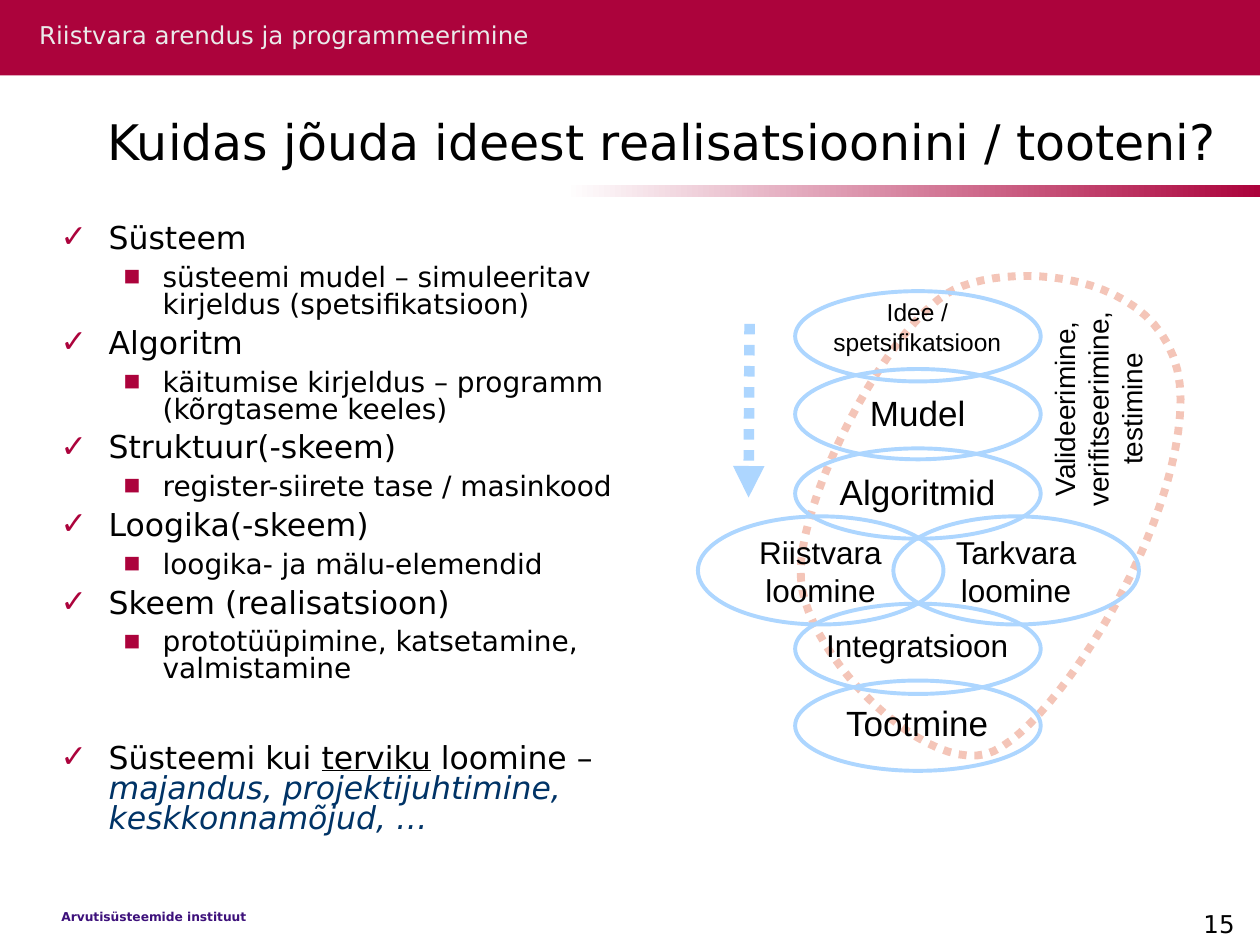
from dataclasses import dataclass

from lxml.etree import SubElement
from pptx import Presentation
from pptx.dml.color import RGBColor
from pptx.enum.dml import MSO_LINE
from pptx.enum.shapes import MSO_CONNECTOR, MSO_SHAPE
from pptx.enum.text import MSO_ANCHOR, MSO_AUTO_SIZE, PP_ALIGN
from pptx.oxml.ns import qn
from pptx.util import Cm, Pt

COLORS = {
    "crimson": "AC033C", "white": "FFFFFF", "pale": "EAEAEA", "violet": "3D117B",
    "black": "000000", "navy": "003366", "sky": "ADD6FF", "salmon": "F4C5B8",
}
SANS, ARIAL = "DejaVu Sans", "Arial"
OVAL_WIDTH, COLUMN_LEFT = 4.95, 16.03


@dataclass(frozen=True)
class Box:
    left: float
    top: float
    width: float
    height: float

    def lengths(self) -> tuple:
        return Cm(self.left), Cm(self.top), Cm(self.width), Cm(self.height)


@dataclass(frozen=True)
class Style:
    size: float
    font: str = SANS
    color: str = "black"
    bold: bool = False
    italic: bool = False
    underline: bool = False


@dataclass(frozen=True)
class Stage:
    lines: tuple
    size: int
    label: Box
    oval: Box


@dataclass(frozen=True)
class Level:
    size: int
    bullet: str
    margin: float
    hanging: float


TOPIC = Level(18, "✓", 0.97, 0.97)
DETAIL = Level(16, "■", 2.06, 0.79)

STAGES = [
    Stage(("Idee /", "spetsifikatsioon"), 14, Box(16.54, 5.87, 3.91, 1.45),
          Box(COLUMN_LEFT, 5.87, OVAL_WIDTH, 1.82)),
    Stage(("Algoritmid",), 20, Box(16.66, 9.37, 3.68, 1.12),
          Box(COLUMN_LEFT, 9.04, OVAL_WIDTH, 1.82)),
    Stage(("Mudel",), 20, Box(17.27, 7.77, 2.46, 1.12),
          Box(COLUMN_LEFT, 7.44, OVAL_WIDTH, 1.82)),
    Stage(("Riistvara", "loomine"), 18, Box(15.04, 10.62, 3, 1.8),
          Box(14.07, 10.41, OVAL_WIDTH, 2.18)),
    Stage(("Tarkvara", "loomine"), 18, Box(19, 10.62, 2.97, 1.8),
          Box(18.01, 10.41, OVAL_WIDTH, 2.18)),
    Stage(("Integratsioon",), 18, Box(16.38, 12.5, 4.22, 1.02),
          Box(COLUMN_LEFT, 12.17, OVAL_WIDTH, 1.82)),
    Stage(("Tootmine",), 20, Box(16.79, 14.02, 3.4, 1.12),
          Box(COLUMN_LEFT, 13.72, OVAL_WIDTH, 1.82)),
]

OUTLINE = [
    ("Süsteem", "süsteemi mudel – simuleeritav kirjeldus (spetsifikatsioon)"),
    ("Algoritm", "käitumise kirjeldus – programm (kõrgtaseme keeles)"),
    ("Struktuur(-skeem)", "register-siirete tase / masinkood"),
    ("Loogika(-skeem)", "loogika- ja mälu-elemendid"),
    ("Skeem (realisatsioon)", "prototüüpimine, katsetamine, valmistamine"),
]
CONCLUSION = [
    ("Süsteemi kui ", Style(18)),
    ("terviku", Style(18, underline=True)),
    (" loomine – ", Style(18)),
    ("majandus, projektijuhtimine, keskkonnamõjud, …", Style(18, color="navy", italic=True)),
]

LOOP_START = (16.15, 11.71)
LOOP_CURVES = [
    ((16, 10.16), (17.96, 6.45), (19.23, 5.84)),
    ((20.5, 5.23), (23.8, 5.49), (23.8, 8.05)),
    ((23.8, 10.62), (21.34, 14.53), (20.04, 15.14)),
    ((18.77, 15.75), (16.28, 13.26), LOOP_START),
]


def rgb(name: str) -> RGBColor:
    return RGBColor.from_string(COLORS[name])


def add_run(paragraph, text: str, style: Style) -> None:
    run = paragraph.add_run()
    run.text = text
    font = run.font
    font.size, font.name = Pt(style.size), style.font
    font.color.rgb = rgb(style.color)
    font.bold, font.italic, font.underline = style.bold, style.italic, style.underline


def place(shape, box: Box) -> None:
    shape.left, shape.top, shape.width, shape.height = box.lengths()


def set_margins(frame, top: float = 0) -> None:
    frame.margin_left = frame.margin_right = frame.margin_bottom = 0
    frame.margin_top = Cm(top)


def add_label(slide, lines: tuple, box: Box, style: Style, align=PP_ALIGN.CENTER):
    label = slide.shapes.add_textbox(*box.lengths())
    label.text_frame.word_wrap = False
    paragraph = label.text_frame.paragraphs[0]
    paragraph.alignment = align
    for index, line in enumerate(lines):
        if index:
            paragraph.add_line_break()
        add_run(paragraph, line, style)
    return label


def add_band(slide, box: Box):
    band = slide.shapes.add_shape(MSO_SHAPE.RECTANGLE, *box.lengths())
    band.shadow.inherit = False
    band.line.fill.background()
    return band


def add_stage(slide, stage: Stage) -> None:
    add_label(slide, stage.lines, stage.label, Style(stage.size, ARIAL))
    oval = slide.shapes.add_shape(MSO_SHAPE.OVAL, *stage.oval.lengths())
    oval.shadow.inherit = False
    oval.fill.background()
    oval.line.color.rgb = rgb("sky")
    oval.line.width = Pt(2.25)


def curve_points(start: tuple, curves: list, steps: int = 24) -> list:
    points = []
    for first, second, end in curves:
        for step in range(1, steps + 1):
            t = step / steps
            u = 1 - t
            points.append(tuple(
                Cm(u**3 * a + 3 * u * u * t * b + 3 * u * t * t * c + t**3 * d)
                for a, b, c, d in zip(start, first, second, end)))
        start = end
    return points


def style_dots(line, color: str, width: float) -> None:
    line.color.rgb = rgb(color)
    line.width = Pt(width)
    line.dash_style = MSO_LINE.ROUND_DOT


def add_loop(slide) -> None:
    builder = slide.shapes.build_freeform(*(Cm(value) for value in LOOP_START))
    builder.add_line_segments(curve_points(LOOP_START, LOOP_CURVES)[:-1], close=True)
    loop = builder.convert_to_shape()
    loop.shadow.inherit = False
    loop.fill.background()
    style_dots(loop.line, "salmon", 4.5)


def add_flow_arrow(slide) -> None:
    arrow = slide.shapes.add_connector(
        MSO_CONNECTOR.STRAIGHT, Cm(15.11), Cm(6.53), Cm(15.09), Cm(10.03))
    style_dots(arrow.line, "sky", 6)
    properties = arrow.element.spPr
    SubElement(properties.find(qn("a:ln")), qn("a:tailEnd"), type="triangle")
    SubElement(properties, qn("a:effectLst"))


def add_item(frame, level: Level, runs: list, before: float) -> None:
    first = not frame.paragraphs[0].runs
    paragraph = frame.paragraphs[0] if first else frame.add_paragraph()
    paragraph.level = int(level is DETAIL)
    properties = paragraph._p.get_or_add_pPr()
    properties.set("marL", str(Cm(level.margin)))
    properties.set("indent", str(-Cm(level.hanging)))
    bullet_color = SubElement(properties, qn("a:buClr"))
    SubElement(bullet_color, qn("a:srgbClr"), val=COLORS["crimson"])
    SubElement(properties, qn("a:buFont"), typeface=ARIAL)
    SubElement(properties, qn("a:buChar"), char=level.bullet)
    paragraph.line_spacing = 0.8
    paragraph.space_before = Pt(0 if first else before)
    paragraph.space_after = Pt(round(level.size * 0.115, 1))
    for text, style in runs:
        add_run(paragraph, text, style)


def fill_outline(body) -> None:
    place(body, Box(1.22, 4.55, 11.68, 12.93))
    frame = body.text_frame
    frame.auto_size, frame.word_wrap = MSO_AUTO_SIZE.NONE, True
    frame.vertical_anchor = MSO_ANCHOR.TOP
    set_margins(frame)
    for pair in OUTLINE:
        for level, text in zip((TOPIC, DETAIL), pair):
            add_item(frame, level, [(text, Style(level.size))], round(level.size * 0.23, 1))
    add_item(frame, TOPIC, CONCLUSION, 33)


def fill_title(title) -> None:
    place(title, Box(0.3, 2.11, 24.46, 1.45))
    frame = title.text_frame
    frame.auto_size, frame.vertical_anchor = MSO_AUTO_SIZE.NONE, MSO_ANCHOR.BOTTOM
    frame.paragraphs[0].alignment = PP_ALIGN.RIGHT
    add_run(frame.paragraphs[0], "Kuidas jõuda ideest realisatsioonini / tooteni?", Style(28))


def add_frame(slide) -> None:
    header = add_band(slide, Box(0, 0, 25.4, 1.52))
    header.fill.solid()
    header.fill.fore_color.rgb = rgb("crimson")
    rule = add_band(slide, Box(11.4, 3.73, 14, 0.24))
    rule.fill.gradient()
    rule.fill.gradient_angle = 0
    for stop, color, position in zip(rule.fill.gradient_stops, ("white", "crimson"), (0, 1)):
        stop.color.rgb = rgb(color)
        stop.position = position
    course = add_label(slide, ("Riistvara arendus ja programmeerimine",),
                       Box(0.79, 0.41, 9.96, 0.61), Style(14, color="pale"), PP_ALIGN.LEFT)
    set_margins(course.text_frame)
    add_label(slide, ("Arvutisüsteemide instituut",), Box(0.99, 18.21, 4.24, 0.56),
              Style(7, color="violet", bold=True), PP_ALIGN.LEFT)
    number = add_label(slide, ("15",), Box(19.61, 18.31, 5.28, 0.61), Style(14), PP_ALIGN.RIGHT)
    number.text_frame.word_wrap = True
    number.text_frame.vertical_anchor = MSO_ANCHOR.BOTTOM
    set_margins(number.text_frame, 0.23)


def main() -> None:
    deck = Presentation()
    deck.slide_width, deck.slide_height = Cm(25.4), Cm(19.05)
    slide = deck.slides.add_slide(deck.slide_layouts[1])
    add_frame(slide)
    fill_title(slide.shapes.title)
    fill_outline(slide.placeholders[1])
    add_loop(slide)
    add_flow_arrow(slide)
    for stage in STAGES:
        add_stage(slide, stage)
    checks = add_label(slide, ("Valideerimine,", "verifitseerimine,", "testimine"),
                       Box(19.89, 7.09, 4.5, 2.31), Style(16, ARIAL))
    checks.rotation = 270
    deck.save("out.pptx")


if __name__ == "__main__":
    main()
